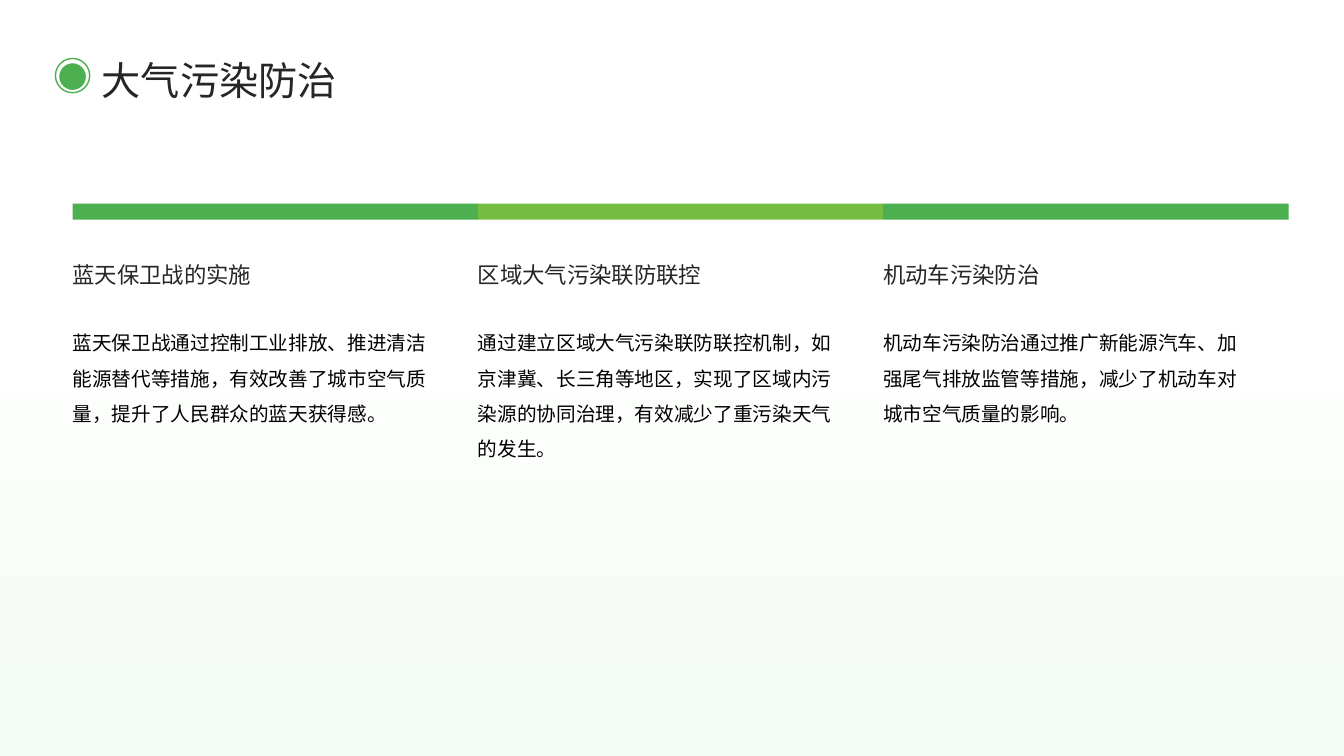
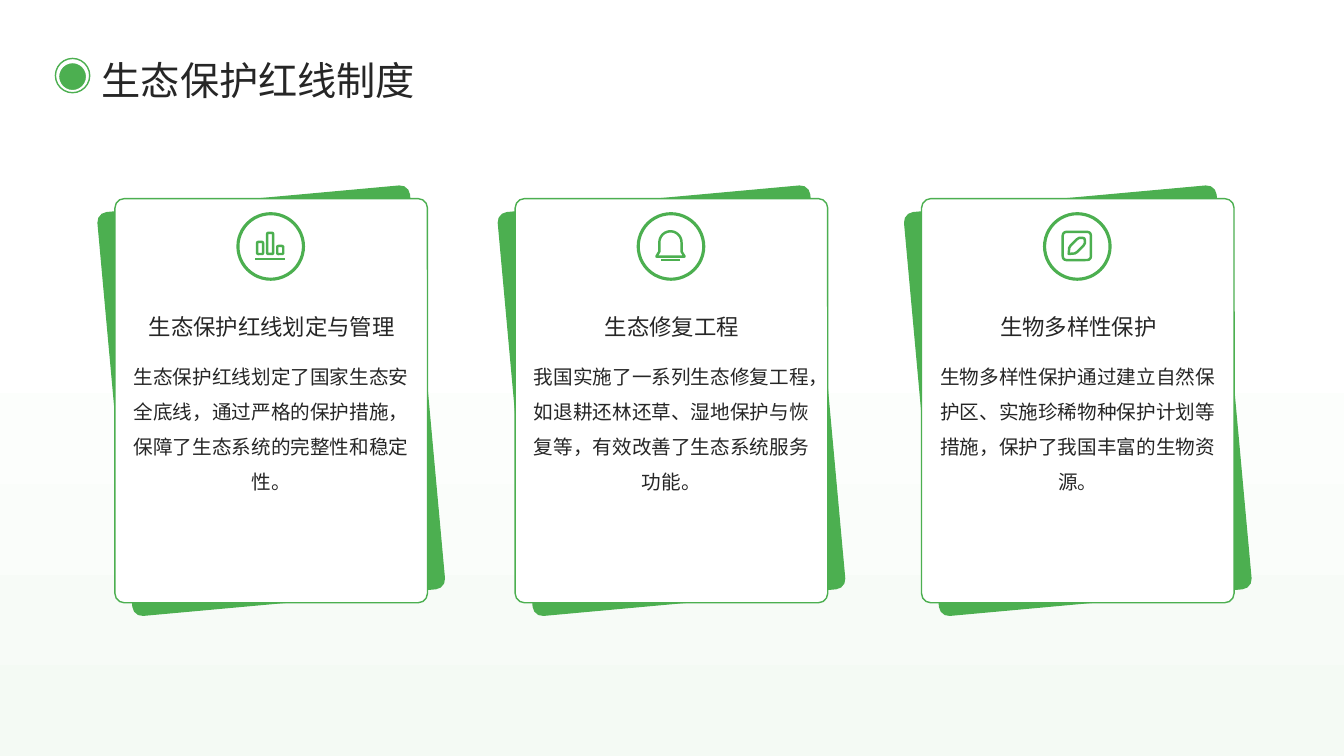
"""Build two slides on air pollution control and ecological red lines."""
import math

from lxml import etree
from pptx import Presentation
from pptx.dml.color import RGBColor
from pptx.enum.shapes import MSO_CONNECTOR, MSO_SHAPE
from pptx.enum.text import MSO_ANCHOR, MSO_AUTO_SIZE, PP_ALIGN
from pptx.oxml.ns import qn
from pptx.util import Inches, Pt

RECT, ROUND, OVAL = MSO_SHAPE.RECTANGLE, MSO_SHAPE.ROUNDED_RECTANGLE, MSO_SHAPE.OVAL
STRAIGHT = MSO_CONNECTOR.STRAIGHT
TOP, MIDDLE = MSO_ANCHOR.TOP, MSO_ANCHOR.MIDDLE
LEFT, CENTER = PP_ALIGN.LEFT, PP_ALIGN.CENTER
FIXED, GROW = MSO_AUTO_SIZE.NONE, MSO_AUTO_SIZE.SHAPE_TO_FIT_TEXT
TITLE_ONLY = 5
FONT = "Noto Sans CJK SC"
COLORS = {
    "green": "4CAF50",
    "lime": "75BD42",
    "white": "FFFFFF",
    "mist": "F4FAF4",
    "ink": "262626",
    "black": "000000",
}
ICON_LINE = 1.75

AIR_MEASURES = [
    ("蓝天保卫战的实施",
     "蓝天保卫战通过控制工业排放、推进清洁能源替代等措施，有效改善了城市空气质量，提升了人民群众的蓝天获得感。"),
    ("区域大气污染联防联控",
     "通过建立区域大气污染联防联控机制，如京津冀、长三角等地区，实现了区域内污染源的协同治理，有效减少了重污染天气的发生。"),
    ("机动车污染防治",
     "机动车污染防治通过推广新能源汽车、加强尾气排放监管等措施，减少了机动车对城市空气质量的影响。"),
]


def color(name):
    """Return the named colour."""
    return RGBColor.from_string(COLORS[name])


class Deck:
    """Hold the shared style and the current slide."""

    def __init__(self):
        """Set the slide size and the shared background."""
        self.prs = Presentation()
        self.prs.slide_width, self.prs.slide_height = Inches(13.33), Inches(7.5)
        self.layout = self.prs.slide_layouts[TITLE_ONLY]
        self.slide = None
        backdrop = self.layout.background.fill
        backdrop.gradient()
        backdrop.gradient_angle = 270
        for stop, position, name in zip(backdrop.gradient_stops, (0.4, 1), ("white", "mist")):
            stop.position = position
            stop.color.rgb = color(name)

    def new_slide(self, title):
        """Start a slide with its title and round badge."""
        self.slide = self.prs.slides.add_slide(self.layout)
        heading = self.slide.shapes.title
        heading.left, heading.top = Inches(1.01), Inches(0.51)
        heading.width, heading.height = Inches(11.88), Inches(0.51)
        self.fill_text(heading.text_frame, title, 28, spacing=1.1, anchor=MIDDLE)
        self.shape(OVAL, 0.55, 0.58, 0.34, 0.34, "white", "green")
        self.shape(OVAL, 0.58, 0.62, 0.28, 0.28, "green", "white")

    def fill_text(self, frame, words, size, ink="ink", spacing=1.5, anchor=TOP,
                  align=LEFT, fit=FIXED):
        """Put one formatted paragraph into a text frame."""
        frame.word_wrap = True
        frame.auto_size = fit
        frame.vertical_anchor = anchor
        frame.margin_left = frame.margin_right = frame.margin_top = frame.margin_bottom = 0
        paragraph = frame.paragraphs[0]
        paragraph.alignment = align
        paragraph.line_spacing = spacing
        run = paragraph.add_run()
        run.text = words
        run.font.size = Pt(size)
        run.font.color.rgb = color(ink)
        run.font.name = FONT
        etree.SubElement(run._r.get_or_add_rPr(), qn("a:ea"), typeface=FONT)

    def text(self, x, y, width, height, words, size, **style):
        """Add a text box."""
        box = self.slide.shapes.add_textbox(Inches(x), Inches(y), Inches(width), Inches(height))
        self.fill_text(box.text_frame, words, size, **style)

    def paint(self, shape, fill=None, line=None, weight=1):
        """Set fill and outline and drop the shadow."""
        shape.shadow.inherit = False
        if fill:
            shape.fill.solid()
            shape.fill.fore_color.rgb = color(fill)
        else:
            shape.fill.background()
        if line:
            shape.line.color.rgb = color(line)
            shape.line.width = Pt(weight)
        else:
            shape.line.fill.background()

    def shape(self, kind, x, y, width, height, fill=None, line=None, weight=1,
              corner=None, rotation=0):
        """Add a preset shape."""
        shape = self.slide.shapes.add_shape(
            kind, Inches(x), Inches(y), Inches(width), Inches(height))
        if corner is not None:
            shape.adjustments[0] = corner
        shape.rotation = rotation
        self.paint(shape, fill, line, weight)

    def line(self, x1, x2, y):
        """Add a horizontal icon stroke."""
        stroke = self.slide.shapes.add_connector(
            STRAIGHT, Inches(x1), Inches(y), Inches(x2), Inches(y))
        stroke.line.color.rgb = color("green")
        stroke.line.width = Pt(ICON_LINE)
        etree.SubElement(stroke._element.spPr, qn("a:effectLst"))

    def outline(self, x, y, hundredths):
        """Add a closed icon outline from points around a centre."""
        points = [(Inches(x + dx / 100), Inches(y + dy / 100)) for dx, dy in hundredths]
        builder = self.slide.shapes.build_freeform(*points[0])
        builder.add_line_segments(points[1:], close=True)
        self.paint(builder.convert_to_shape(), line="green", weight=ICON_LINE)

    def bars_icon(self, x, y):
        """Draw a bar chart icon."""
        for offset, height in ((-0.1, 0.12), (0, 0.21), (0.1, 0.08)):
            self.shape(ROUND, x + offset - 0.03, y + 0.08 - height, 0.06, height,
                       line="green", weight=ICON_LINE, corner=0.2)
        self.line(x - 0.15, x + 0.15, y + 0.13)

    def bell_icon(self, x, y):
        """Draw a bell icon."""
        angles = [math.radians(step) for step in range(180, 361, 10)]
        dome = [(11 * math.cos(a), 11 * math.sin(a) - 3.5) for a in angles]
        self.outline(x, y, dome + [(11, 5.5), (14, 10.5), (-14, 10.5), (-11, 5.5)])
        self.line(x - 0.09, x + 0.09, y + 0.14)

    def leaf_icon(self, x, y):
        """Draw a leaf in a rounded frame."""
        self.shape(ROUND, x - 0.14, y - 0.14, 0.28, 0.28,
                   line="green", weight=ICON_LINE, corner=0.13)
        half = [(-8, 8), (-7.5, 2), (-6, -0.5), (0, -6.5), (2.5, -8), (5.5, -8), (7.5, -7.5)]
        mirrored = [(-dy, -dx) for dx, dy in reversed(half[1:-1])]
        self.outline(x, y, half + mirrored)

    def column(self, x, band, heading, body):
        """Add a column under its coloured band."""
        self.shape(RECT, x, 2.02, 4.02, 0.16, band)
        self.text(x, 2.3, 3.63, 0.79, heading, 16, spacing=1.2, anchor=MIDDLE)
        self.text(x, 3.17, 3.63, 2.76, body, 14, ink="black")

    def card(self, x, icon, heading, body):
        """Add a card over its tilted backing sheet."""
        for fill, tilt in (("green", -5.2), ("white", 0)):
            self.shape(ROUND, x, 1.97, 3.1, 4.01, fill, "green", corner=0.03, rotation=tilt)
        self.shape(OVAL, x + 1.22, 2.12, 0.65, 0.65, "white", "green", 2.25)
        icon(x + 1.54, 2.44)
        self.text(x + 0.18, 3.05, 2.75, 0.29, heading, 16, spacing=1.3,
                  anchor=MIDDLE, align=CENTER, fit=GROW)
        self.text(x + 0.18, 3.5, 2.74, 2.3, body, 14, align=CENTER)


def main():
    """Build and save both slides."""
    deck = Deck()
    deck.new_slide("大气污染防治")
    for index, (heading, body) in enumerate(AIR_MEASURES):
        deck.column(0.72 + 4.02 * index, ("green", "lime")[index % 2], heading, body)

    deck.new_slide("生态保护红线制度")
    protections = [
        (1.14, deck.bars_icon, "生态保护红线划定与管理",
         "生态保护红线划定了国家生态安全底线，通过严格的保护措施，保障了生态系统的完整性和稳定性。"),
        (5.11, deck.bell_icon, "生态修复工程",
         "我国实施了一系列生态修复工程，如退耕还林还草、湿地保护与恢复等，有效改善了生态系统服务功能。"),
        (9.14, deck.leaf_icon, "生物多样性保护",
         "生物多样性保护通过建立自然保护区、实施珍稀物种保护计划等措施，保护了我国丰富的生物资源。"),
    ]
    for protection in protections:
        deck.card(*protection)
    deck.prs.save("out.pptx")


if __name__ == "__main__":
    main()
